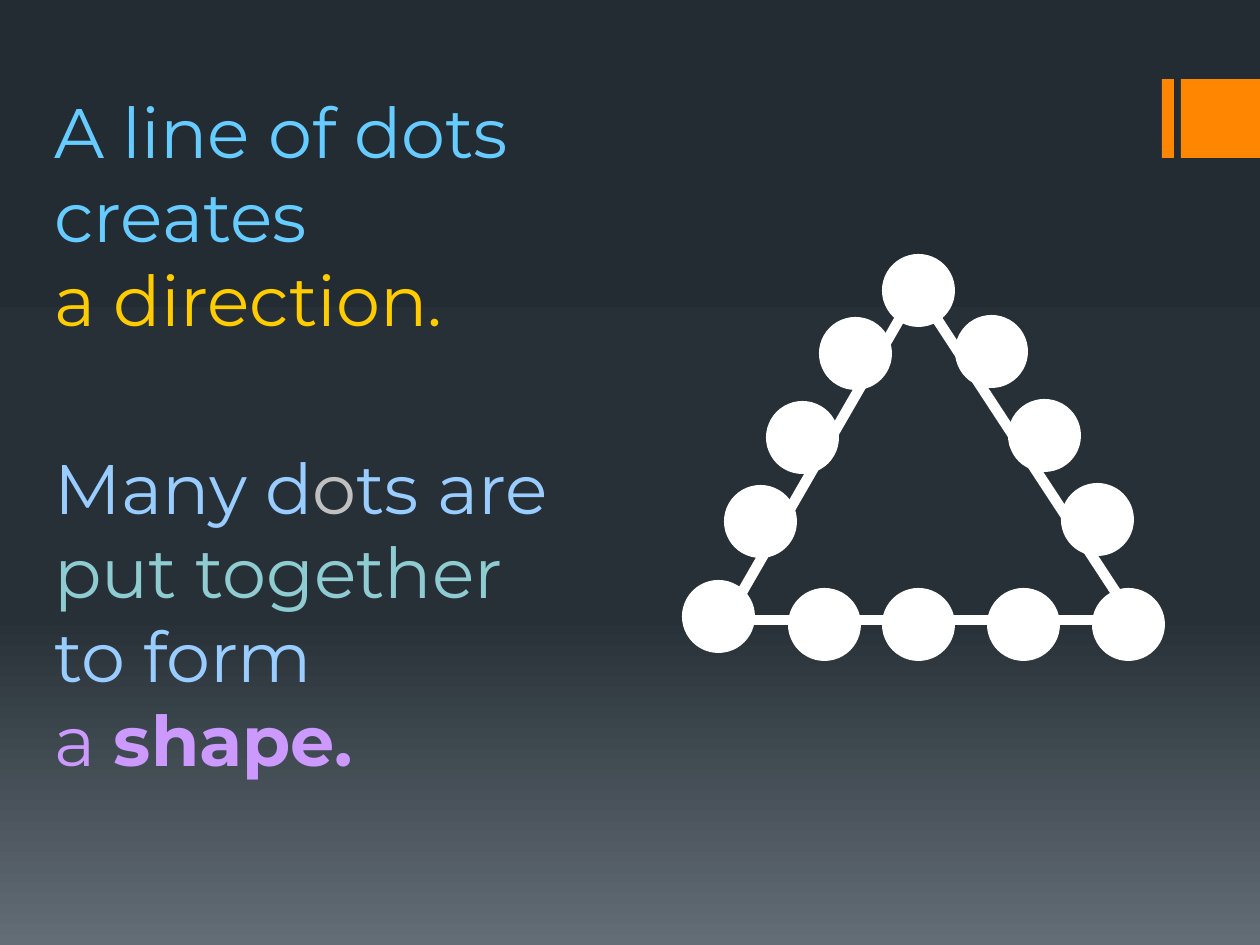
from copy import deepcopy

from pptx import Presentation
from pptx.dml.color import RGBColor
from pptx.enum.shapes import MSO_CONNECTOR, MSO_SHAPE
from pptx.enum.text import MSO_AUTO_SIZE
from pptx.oxml.ns import qn
from pptx.util import Emu, Pt
from lxml.etree import SubElement

PX = 914400 / 126
WHITE = "FFFFFF"
ORANGE = "FF8600"
DOT_SIZE = 73


def px(*lengths):
    """Turn pixel lengths into a list of EMU lengths."""
    return [Emu(round(length * PX)) for length in lengths]


color = RGBColor.from_string

prs = Presentation()
prs.slide_width, prs.slide_height = px(1260, 945)
slide = prs.slides.add_slide(prs.slide_layouts[6])

# Background: dark at the top, lighter at the foot
background = slide.background.fill
background.gradient()
background.gradient_angle = 270
stop_list = slide.element.xpath(".//a:gsLst")[0]
stop_list.append(deepcopy(stop_list[-1]))
gradient = [(0, "242C33"), (0.65, "273037"), (1, "636D76")]
for stop, (position, shade) in zip(background.gradient_stops, gradient):
    stop.position = position
    stop.color.rgb = color(shade)

# Orange corner bars and the dots of the triangle
bars = [(1162, 79, 12, 79), (1181, 79, 79, 79)]
left_side = [(682, 580), (724, 485), (766, 401), (819, 317)]
right_side = [(882, 254), (955, 315), (1008, 399), (1061, 483)]
base = [(x, 588) for x in (1092, 987, 882, 788)]
dots = [(x, y, DOT_SIZE, DOT_SIZE) for x, y in left_side + right_side + base]
for preset, fill, boxes in [
    (MSO_SHAPE.RECTANGLE, ORANGE, bars),
    (MSO_SHAPE.OVAL, WHITE, dots),
]:
    for box in boxes:
        shape = slide.shapes.add_shape(preset, *px(*box))
        shape.shadow.inherit = False
        shape.fill.solid()
        shape.fill.fore_color.rgb = color(fill)
        shape.line.fill.background()

# Triangle sides
sides = [
    (914, 294, 726, 620),
    (724, 620, 1134, 620),
    (1134, 620, 914, 284),
]
for ends in sides:
    side = slide.shapes.add_connector(MSO_CONNECTOR.STRAIGHT, *px(*ends))
    side.line.color.rgb = color(WHITE)
    side.line.width = Pt(6)
    SubElement(side._element.spPr, qn("a:effectLst"))

# Statements: box, then paragraphs of (text, colour, bold) runs
statements = [
    ((42, 82, 577, 265), [
        [("A line of dots", "66CCFF", False)],
        [("creates", "66CCFF", False)],
        [("a direction.", "FFCC00", False)],
    ]),
    ((42, 438, 640, 349), [
        [
            ("Many d", "99CCFF", False),
            ("o", "C0C0C0", False),
            ("ts are ", "99CCFF", False),
            ("put together", "8FCCD1", False),
        ],
        [("to form", "99CCFF", False)],
        [("a ", "CC99FF", False), ("shape.", "CC99FF", True)],
    ]),
]
for box, paragraphs in statements:
    frame = slide.shapes.add_textbox(*px(*box)).text_frame
    frame.word_wrap = True
    frame.auto_size = MSO_AUTO_SIZE.SHAPE_TO_FIT_TEXT
    for index, parts in enumerate(paragraphs):
        paragraph = frame.add_paragraph() if index else frame.paragraphs[0]
        for text, shade, bold in parts:
            run = paragraph.add_run()
            run.text = text
            run.font.name = "Montserrat"
            run.font.size = Pt(40)
            run.font.bold = bold
            run.font.color.rgb = color(shade)

prs.save("out.pptx")
